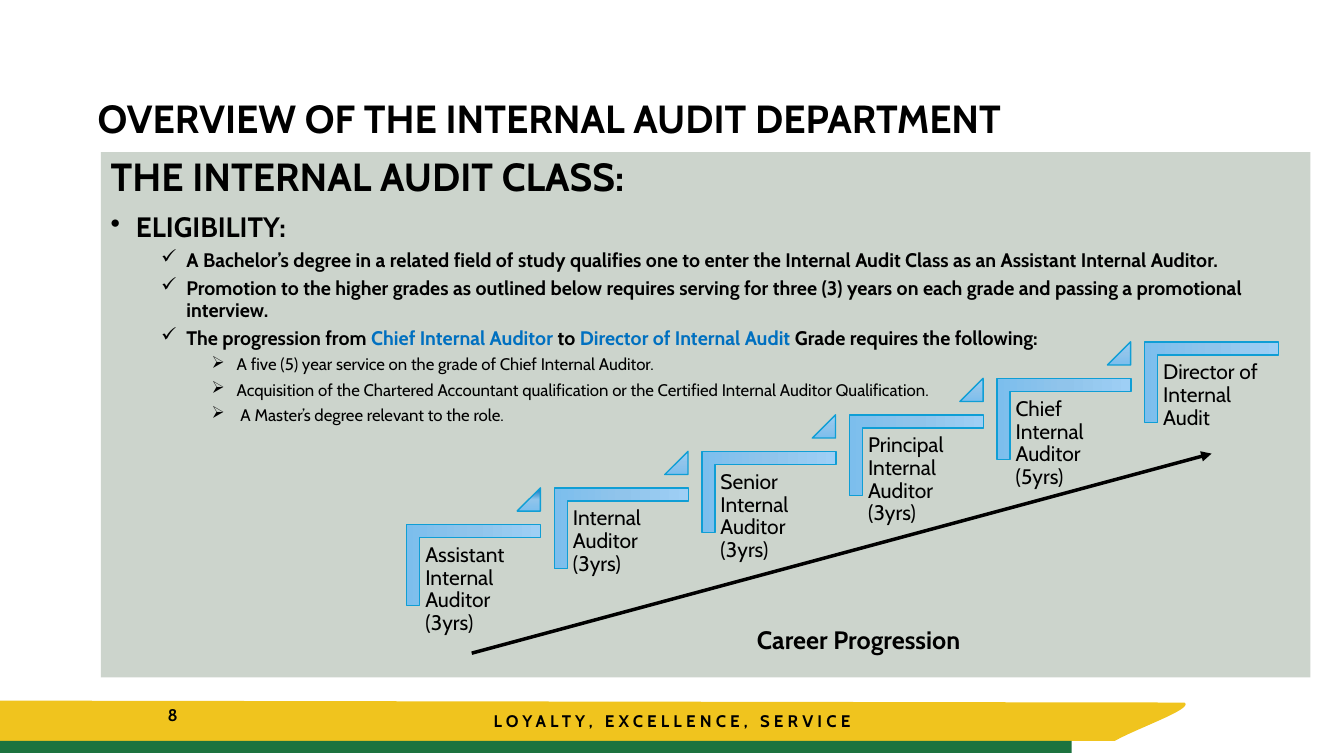
from copy import deepcopy
from dataclasses import dataclass

from lxml import etree
from pptx import Presentation
from pptx.dml.color import RGBColor
from pptx.enum.shapes import MSO_CONNECTOR, MSO_SHAPE
from pptx.enum.text import MSO_ANCHOR, PP_ALIGN
from pptx.oxml.ns import qn
from pptx.util import Inches, Pt

RECTANGLE, CORNER, TRIANGLE = MSO_SHAPE.RECTANGLE, MSO_SHAPE.CORNER, MSO_SHAPE.RIGHT_TRIANGLE
PEAK = MSO_SHAPE.ISOSCELES_TRIANGLE
TOP, MIDDLE = MSO_ANCHOR.TOP, MSO_ANCHOR.MIDDLE
LEFT, CENTER, RIGHT = PP_ALIGN.LEFT, PP_ALIGN.CENTER, PP_ALIGN.RIGHT

COLORS = {
    "black": "000000", "blue": "0070C0", "yellow": "F0C41E", "green": "1C733F",
    "panel": "CCD4CC", "outline": "0F9ED5",
    "sky": "9ECFF5", "sky_middle": "90C4EB", "sky_deep": "7CBEED",
}
FONT = "Cabin"

# The slide is a grid of 100 columns by 100 rows.
WIDTH, HEIGHT = Inches(13.333), Inches(7.5)
COLUMN, ROW = WIDTH / 100, HEIGHT / 100
STEP_COLUMNS, STEP_ROWS = 10.98, -4.83


@dataclass(frozen=True)
class Box:
    left: float
    top: float
    width: float
    height: float

    def emu(self) -> tuple[int, ...]:
        return (round(self.left * COLUMN), round(self.top * ROW),
                round(self.width * COLUMN), round(self.height * ROW))

    def climbed(self, steps: int) -> "Box":
        return Box(self.left + steps * STEP_COLUMNS, self.top + steps * STEP_ROWS,
                   self.width, self.height)


@dataclass(frozen=True)
class Line:
    """A paragraph whose runs are (text, colour name) pairs."""
    runs: tuple[tuple[str, str], ...]
    size: float
    bold: bool = True
    level: int = 0
    bullet: str = ""
    indent: float = 0
    before: float = 0


def plain(text: str, size: float, **style) -> Line:
    return Line(((text, "black"),), size, **style)


def heading(text: str) -> Line:
    return plain(text, 20, bullet="•", indent=0.25, before=10)


def check(*runs: tuple[str, str]) -> Line:
    return Line(runs, 14, level=1, bullet="✓", indent=0.75, before=5)


def detail(text: str) -> Line:
    return plain(text, 12, bold=False, level=2, bullet="➢", indent=1.25, before=5)


BODY = [
    plain("THE INTERNAL AUDIT CLASS:", 28),
    heading("ELIGIBILITY:"),
    check(("A Bachelor’s degree in a related field of study qualifies one to enter "
           "the Internal Audit Class as an Assistant Internal Auditor.", "black")),
    check(("Promotion to the higher grades as outlined below requires serving for three (3) "
           "years on each grade and passing a promotional interview.", "black")),
    check(("The progression from ", "black"), ("Chief Internal Auditor", "blue"),
          (" to ", "black"), ("Director of Internal Audit ", "blue"),
          ("Grade requires the following:", "black")),
    detail("A five (5) year service on the grade of Chief Internal Auditor."),
    detail("Acquisition of the Chartered Accountant qualification or the Certified "
           "Internal Auditor Qualification."),
    detail(" A Master’s degree relevant to the role."),
]
GRADES = [
    "Assistant Internal Auditor (3yrs)", "Internal Auditor (3yrs)",
    "Senior Internal Auditor (3yrs)", "Principal Internal Auditor (3yrs)",
    "Chief Internal Auditor (5yrs)", "Director of Internal Audit",
]


def color(name: str) -> RGBColor:
    return RGBColor.from_string(COLORS[name])


def write_text(shape, lines: list[Line], *, align=LEFT, anchor=TOP, line_spacing: float = 1.0,
               inset: float | None = None, tracking: float = 0) -> None:
    frame = shape.text_frame
    frame.word_wrap = True
    frame.vertical_anchor = anchor
    if inset is not None:
        frame.margin_left = frame.margin_right = Inches(inset)
        frame.margin_top = frame.margin_bottom = Inches(inset)
    for index, line in enumerate(lines):
        paragraph = frame.add_paragraph() if index else frame.paragraphs[0]
        paragraph.alignment, paragraph.level = align, line.level
        paragraph.line_spacing = line_spacing
        if line.before:
            paragraph.space_before = Pt(line.before)
        if line.bullet:
            properties = paragraph._p.get_or_add_pPr()
            properties.set("marL", str(Inches(line.indent)))
            properties.set("indent", str(Inches(-0.25)))
            etree.SubElement(properties, qn("a:buChar")).set("char", line.bullet)
        for text, color_name in line.runs:
            run = paragraph.add_run()
            run.text = text
            run.font.name, run.font.size, run.font.bold = FONT, Pt(line.size), line.bold
            run.font.color.rgb = color(color_name)
            if tracking:
                run.font._element.set("spc", str(round(tracking * 100)))


def add_text(slide, box: Box, *lines: Line, **text_format) -> None:
    write_text(slide.shapes.add_textbox(*box.emu()), list(lines), **text_format)


def paint_flat(shape, color_name: str) -> None:
    shape.shadow.inherit = False
    shape.fill.solid()
    shape.fill.fore_color.rgb = color(color_name)
    shape.line.fill.background()


def add_panel(slide, box: Box, color_name: str):
    shape = slide.shapes.add_shape(RECTANGLE, *box.emu())
    paint_flat(shape, color_name)
    return shape


def add_glossy(slide, kind, box: Box, adjustments: list[float], first_color: str = "sky"):
    """Add an outlined shape with a three-stop vertical gradient."""
    shape = slide.shapes.add_shape(kind, *box.emu())
    shape.shadow.inherit = False
    for index, value in enumerate(adjustments):
        shape.adjustments[index] = value
    shape.fill.gradient()
    shape.fill.gradient_angle = 270
    first_stop = shape.fill._xPr.find(f".//{qn('a:gs')}")
    first_stop.addnext(deepcopy(first_stop))
    names = (first_color, "sky_middle", "sky_deep")
    for index, (stop, name) in enumerate(zip(shape.fill.gradient_stops, names)):
        stop.position = index / 2
        stop.color.rgb = color(name)
    shape.line.color.rgb, shape.line.width = color("outline"), Pt(1)
    return shape


def add_footer_band(slide) -> None:
    curve = [(88.13, 92.93), (88.88, 93.73), (84.68, 96.27), (82.95, 98)]
    samples = 24
    points = []
    for index in range(samples + 1):
        t = index / samples
        weights = ((1 - t) ** 3, 3 * t * (1 - t) ** 2, 3 * t * t * (1 - t), t ** 3)
        points.append(tuple(sum(weight * point[axis] for weight, point in zip(weights, curve))
                            for axis in (0, 1)))
    builder = slide.shapes.build_freeform(0, round(92.67 * ROW))
    builder.add_line_segments([(round(x * COLUMN), round(y * ROW))
                               for x, y in [*points, (0, 98)]])
    paint_flat(builder.convert_to_shape(), "yellow")


def add_career_arrow(slide) -> None:
    arrow = slide.shapes.add_connector(
        MSO_CONNECTOR.STRAIGHT, round(35.1 * COLUMN), round(86.4 * ROW),
        round(90.15 * COLUMN), round(60 * ROW))
    arrow.line.color.rgb, arrow.line.width = color("black"), Pt(2.5)
    etree.SubElement(arrow.line._get_or_add_ln(), qn("a:tailEnd")).set("type", "triangle")
    etree.SubElement(arrow._element.spPr, qn("a:effectLst"))


def add_staircase(slide) -> None:
    for step, grade in enumerate(GRADES):
        corner = add_glossy(slide, CORNER, Box(32.25, 65.87, 6, 17.73).climbed(step),
                            [0.161, 0.161])
        corner.rotation = 90
        add_text(slide, Box(31.2, 71.2, 9, 14).climbed(step),
                 plain(grade, 15, bold=False), line_spacing=0.9, inset=0.06)
        if step < len(GRADES) - 1:
            add_glossy(slide, PEAK, Box(38.48, 64.53, 1.73, 3.07).climbed(step), [1],
                       "sky" if step else "blue")


def main() -> None:
    presentation = Presentation()
    presentation.slide_width, presentation.slide_height = WIDTH, HEIGHT
    slide = presentation.slides.add_slide(presentation.slide_layouts[6])
    add_footer_band(slide)
    add_panel(slide, Box(0, 98, 79.73, 1.6), "green")
    add_text(slide, Box(6.53, 14.13, 79.73, 3.73),
             plain("OVERVIEW OF THE INTERNAL AUDIT DEPARTMENT", 28),
             anchor=MIDDLE, line_spacing=0.9)
    add_text(slide, Box(33.15, 92.67, 33.75, 5.33), plain("LOYALTY, EXCELLENCE, SERVICE", 12),
             align=CENTER, anchor=MIDDLE, tracking=3)
    add_text(slide, Box(6.53, 91.87, 7.43, 5.33), plain("8", 12), align=RIGHT, anchor=MIDDLE)
    write_text(add_panel(slide, Box(7.5, 20.13, 90, 69.47), "panel"), BODY, line_spacing=0.9)
    add_staircase(slide)
    add_career_arrow(slide)
    add_text(slide, Box(55.58, 81.87, 18.45, 5.33), plain("Career Progression", 18))
    presentation.save("out.pptx")


if __name__ == "__main__":
    main()
